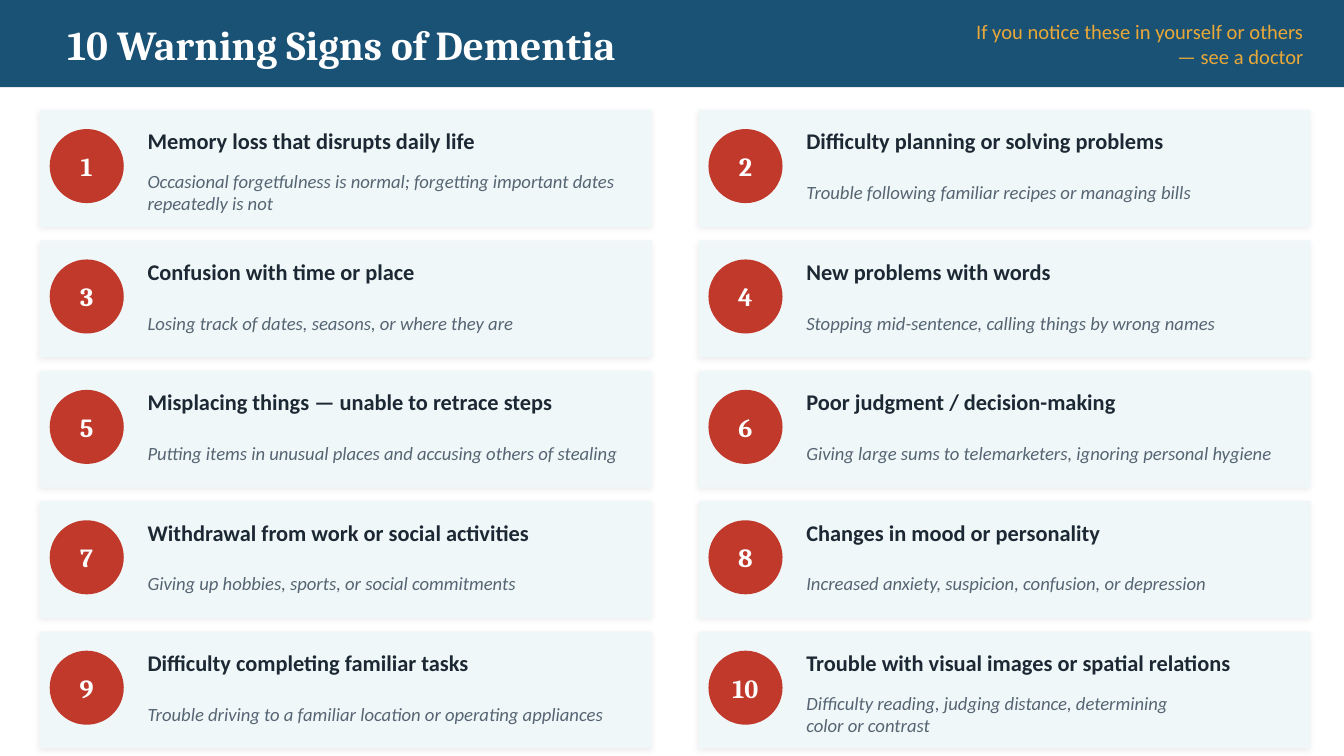
from lxml.etree import SubElement
from pptx import Presentation
from pptx.dml.color import RGBColor
from pptx.enum.shapes import MSO_SHAPE
from pptx.enum.text import MSO_ANCHOR, MSO_AUTO_SIZE, PP_ALIGN
from pptx.oxml import parse_xml
from pptx.util import Cm, Pt

SIGNS = [
    ("Memory loss that disrupts daily life",
     "Occasional forgetfulness is normal; forgetting important dates repeatedly is not"),
    ("Difficulty planning or solving problems",
     "Trouble following familiar recipes or managing bills"),
    ("Confusion with time or place",
     "Losing track of dates, seasons, or where they are"),
    ("New problems with words",
     "Stopping mid-sentence, calling things by wrong names"),
    ("Misplacing things — unable to retrace steps",
     "Putting items in unusual places and accusing others of stealing"),
    ("Poor judgment / decision-making",
     "Giving large sums to telemarketers, ignoring personal hygiene"),
    ("Withdrawal from work or social activities",
     "Giving up hobbies, sports, or social commitments"),
    ("Changes in mood or personality",
     "Increased anxiety, suspicion, confusion, or depression"),
    ("Difficulty completing familiar tasks",
     "Trouble driving to a familiar location or operating appliances"),
    ("Trouble with visual images or spatial relations",
     "Difficulty reading, judging distance, determining\ncolor or contrast"),
]

# Text formats: colour and font values
HEAD = "FFFFFF", {"name": "Cambria", "size": Pt(22), "bold": True}
NOTE = "E8A838", {"name": "Calibri", "size": Pt(11)}
COUNT = "FFFFFF", {"name": "Cambria", "size": Pt(14), "bold": True}
SIGN = "1C2833", {"name": "Calibri", "size": Pt(12), "bold": True}
HINT = "566573", {"name": "Calibri", "size": Pt(10), "italic": True}

SHADE = parse_xml(
    '<a:outerShdw xmlns:a="http://schemas.openxmlformats.org/drawingml/2006/main"'
    ' blurRad="38100" dist="12700" dir="8100000" algn="bl" rotWithShape="0">'
    '<a:srgbClr val="000000"><a:alpha val="7000"/></a:srgbClr></a:outerShdw>')


def write(shape, text, style, align=PP_ALIGN.LEFT):
    tint, values = style
    frame = shape.text_frame
    frame.text = text
    frame.word_wrap = True
    frame.auto_size = MSO_AUTO_SIZE.NONE
    frame.vertical_anchor = MSO_ANCHOR.MIDDLE
    for para in frame.paragraphs:
        para.alignment = align
        for key, value in values.items():
            setattr(para.font, key, value)
        para.font.color.rgb = RGBColor.from_string(tint)


def draw(kind, left, top, width, height, tint):
    shape = slide.shapes.add_shape(kind, Cm(left), Cm(top), Cm(width), Cm(height))
    shape.shadow.inherit = False
    shape.fill.solid()
    shape.fill.fore_color.rgb = RGBColor.from_string(tint)
    shape.line.fill.background()
    return shape


deck = Presentation()
deck.slide_width, deck.slide_height = Cm(25.4), Cm(14.29)
slide = deck.slides.add_slide(deck.slide_layouts[5])
boxes = slide.shapes

# Header band behind the title
band = draw(MSO_SHAPE.RECTANGLE, 0, 0, 25.4, 1.65, "1A5276")
title = boxes.title
title.element.addprevious(band.element)
title.left, title.top, title.width, title.height = Cm(1.02), Cm(0.13), Cm(19.05), Cm(1.4)
write(title, "10 Warning Signs of Dementia", HEAD)
note = boxes.add_textbox(Cm(17.78), Cm(0.13), Cm(7.11), Cm(1.4))
write(note, "If you notice these in yourself or others — see a doctor", NOTE, PP_ALIGN.RIGHT)

# Cards in two columns, numbered row by row
for index, (sign, hint) in enumerate(SIGNS):
    row, col = divmod(index, 2)
    left, top = 0.76 + 12.45 * col, 2.08 + 2.465 * row
    card = draw(MSO_SHAPE.RECTANGLE, left, top, 11.56, 2.21, "F0F7F8")
    glow = card.element.spPr.find("{*}effectLst")
    shade = SubElement(glow, SHADE.tag, SHADE.attrib)
    shade.extend(parse_xml('<a:x xmlns:a="http://schemas.openxmlformats.org/drawingml/2006/main">'
                           '<a:srgbClr val="000000"><a:alpha val="7000"/></a:srgbClr></a:x>'))

    # Number badge
    badge = draw(MSO_SHAPE.OVAL, left + 0.18, top + 0.36, 1.4, 1.4, "C0392B")
    frame = badge.text_frame
    for side in ("left", "top", "right", "bottom"):
        setattr(frame, f"margin_{side}", 0)
    write(badge, str(index + 1), COUNT, PP_ALIGN.CENTER)

    # Sign and its hint
    for text, style, drop, height in ((sign, SIGN, 0.13, 0.91), (hint, HINT, 1.07, 0.97)):
        box = boxes.add_textbox(Cm(left + 1.78), Cm(top + drop), Cm(9.58), Cm(height))
        write(box, text, style)

deck.save("out.pptx")
